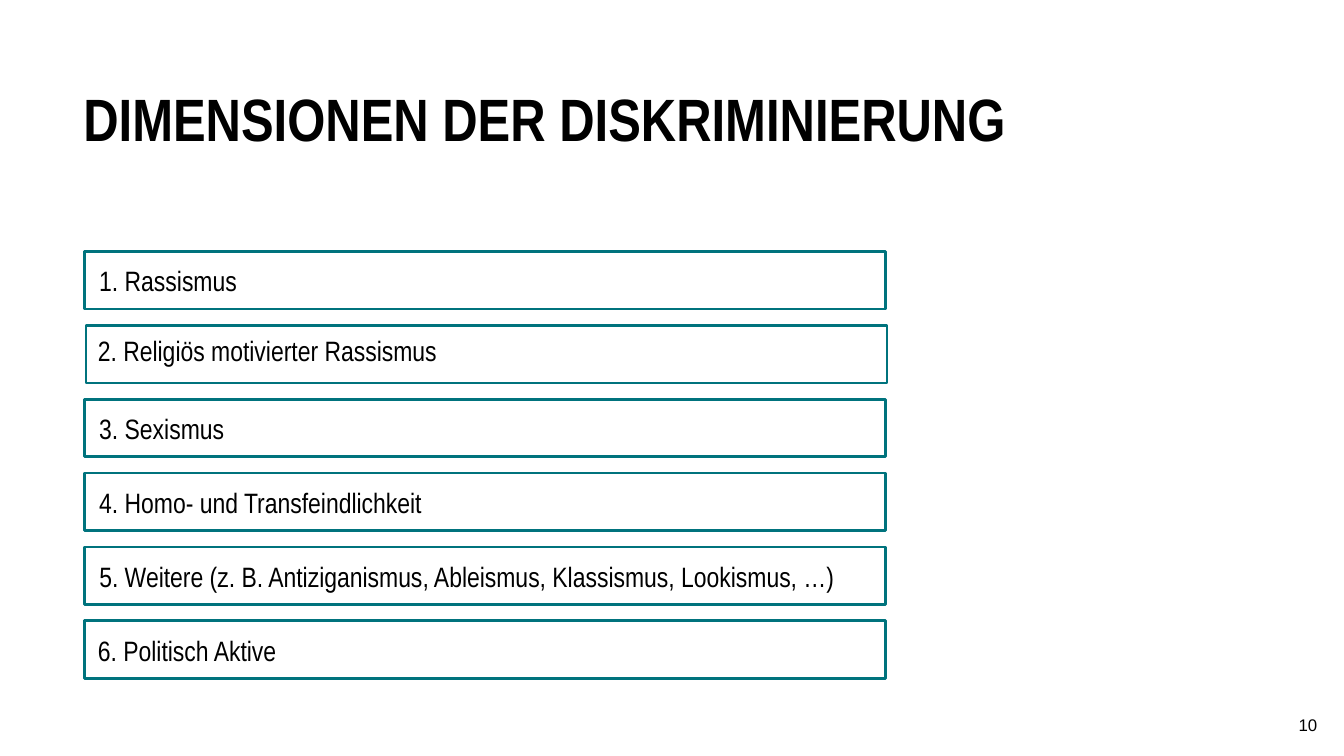
from dataclasses import dataclass

from pptx import Presentation
from pptx.dml.color import RGBColor
from pptx.enum.shapes import MSO_SHAPE
from pptx.enum.text import MSO_ANCHOR, MSO_AUTO_SIZE, PP_ALIGN
from pptx.shapes.autoshape import Shape
from pptx.slide import Slide
from pptx.util import Emu, Length, Pt

EMU_PER_PX = 9144  # 100 px to the inch
COLORS = {"text": "000000", "frame": "00737D"}

FIRST_FRAME_TOP, ROW_PITCH = 187, 55
FRAME_LEFT, FRAME_WIDTH, FRAME_HEIGHT = 63, 596, 43
LABEL_OFFSET, LABEL_HEIGHT = 7, 31


@dataclass(frozen=True)
class Dimension:
    label: str
    label_left: int = 64
    label_width: int = 440
    label_shift: int = 0
    frame_shift: int = 0


DIMENSIONS = [
    Dimension("1. Rassismus"),
    Dimension("2. Religiös motivierter Rassismus", label_left=63,
              label_width=770, label_shift=-3, frame_shift=1),
    Dimension("3. Sexismus"),
    Dimension("4. Homo- und Transfeindlichkeit"),
    Dimension("5. Weitere (z. B. Antiziganismus, Ableismus, Klassismus, Lookismus, …)",
              label_width=858),
    Dimension("6. Politisch Aktive", label_left=63),
]


def px(value: int) -> Length:
    return Emu(value * EMU_PER_PX)


def color(name: str) -> RGBColor:
    return RGBColor.from_string(COLORS[name])


def place(shape: Shape, left: int, top: int, width: int, height: int) -> None:
    shape.left, shape.top = px(left), px(top)
    shape.width, shape.height = px(width), px(height)


def write(shape: Shape, text: str, size: int, font_name: str = "Arial Narrow",
          bold: bool = False, align: PP_ALIGN = PP_ALIGN.LEFT,
          anchor: MSO_ANCHOR = MSO_ANCHOR.TOP,
          line_spacing: float | Length = 1.0) -> None:
    text_frame = shape.text_frame
    text_frame.text = text
    text_frame.word_wrap = True
    text_frame.auto_size = MSO_AUTO_SIZE.NONE
    text_frame.vertical_anchor = anchor
    paragraph = text_frame.paragraphs[0]
    paragraph.alignment = align
    paragraph.line_spacing = line_spacing
    font = paragraph.runs[0].font
    font.name, font.size, font.bold = font_name, Pt(size), bold
    font.color.rgb = color("text")


def add_text(slide: Slide, left: int, top: int, width: int, height: int) -> Shape:
    return slide.shapes.add_textbox(px(left), px(top), px(width), px(height))


def draw_dimension(slide: Slide, dimension: Dimension, top: int) -> None:
    label = add_text(slide, dimension.label_left,
                     top + LABEL_OFFSET + dimension.label_shift,
                     dimension.label_width, LABEL_HEIGHT)
    write(label, dimension.label, 15, line_spacing=0.9)

    frame = slide.shapes.add_shape(
        MSO_SHAPE.RECTANGLE, px(FRAME_LEFT + dimension.frame_shift), px(top),
        px(FRAME_WIDTH), px(FRAME_HEIGHT))
    frame.shadow.inherit = False
    frame.fill.background()
    frame.line.color.rgb = color("frame")
    frame.line.width = Pt(1.5)


def main() -> None:
    presentation = Presentation()
    presentation.slide_width = px(1000)
    presentation.slide_height = px(1000) * 9 // 16
    slide = presentation.slides.add_slide(presentation.slide_layouts[5])

    # Title
    title = slide.shapes.title
    place(title, 52, 56, 786, 97)
    write(title, "DIMENSIONEN DER DISKRIMINIERUNG", 32, bold=True,
          line_spacing=Pt(38.4))

    # Framed list
    for index, dimension in enumerate(DIMENSIONS):
        draw_dimension(slide, dimension, FIRST_FRAME_TOP + index * ROW_PITCH)

    # Slide number
    number = add_text(slide, 765, 524, 225, 30)
    write(number, "10", 9, font_name="Arial", align=PP_ALIGN.RIGHT,
          anchor=MSO_ANCHOR.MIDDLE)

    presentation.save("out.pptx")


if __name__ == "__main__":
    main()
